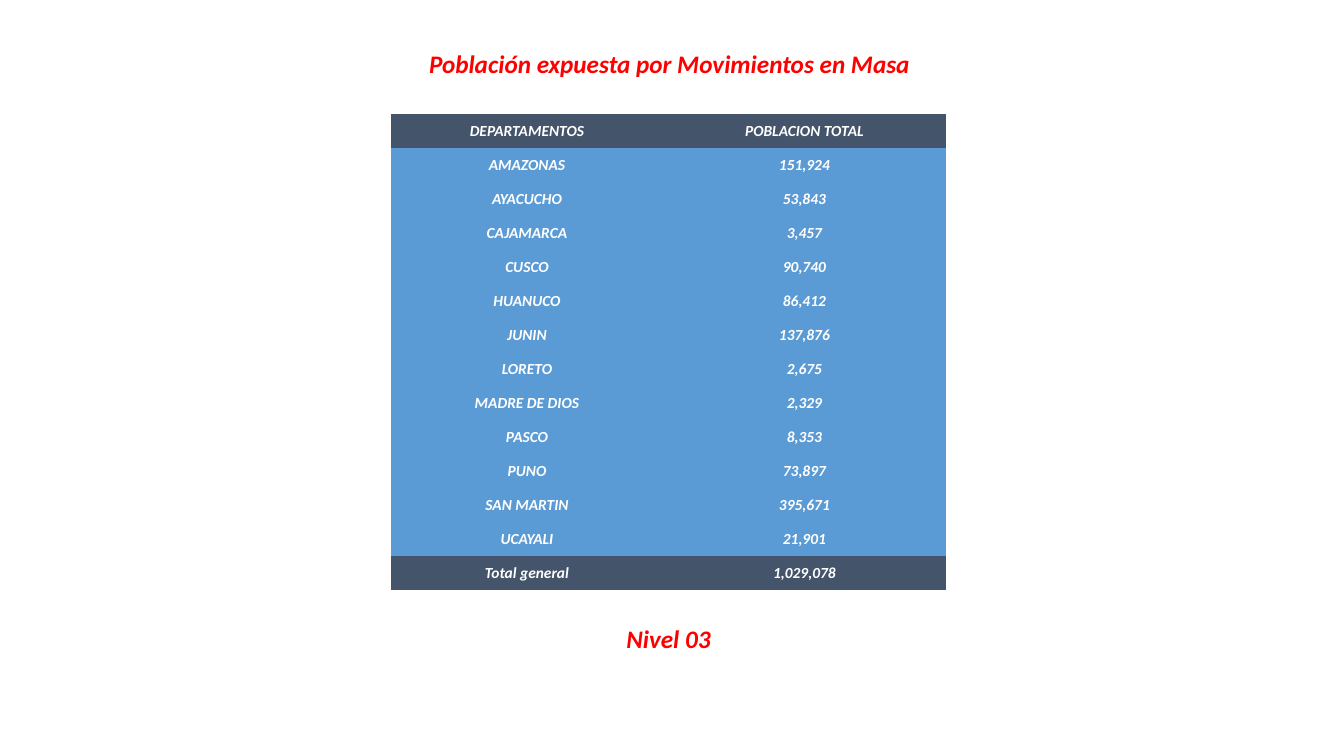
from pptx import Presentation
from pptx.dml.color import RGBColor
from pptx.enum.text import MSO_ANCHOR, MSO_AUTO_SIZE, PP_ALIGN
from pptx.oxml.ns import qn
from pptx.util import Emu, Pt

EMU_PER_PX = 914400 / 100.8
FONT = "Calibri"
COLORS = {"heading": "FF0000", "text": "FFFFFF", "edge": "44546A", "body": "5B9BD5"}
NO_GRID_STYLE = "{2D5ABB26-0587-4C30-8999-92F81FD0307C}"
COLUMN_WIDTHS = (272, 283)
ROW_HEIGHT = 34

POPULATION = [
    ("DEPARTAMENTOS", "POBLACION TOTAL"),
    ("AMAZONAS", "151,924"),
    ("AYACUCHO", "53,843"),
    ("CAJAMARCA", "3,457"),
    ("CUSCO", "90,740"),
    ("HUANUCO", "86,412"),
    ("JUNIN", "137,876"),
    ("LORETO", "2,675"),
    ("MADRE DE DIOS", "2,329"),
    ("PASCO", "8,353"),
    ("PUNO", "73,897"),
    ("SAN MARTIN", "395,671"),
    ("UCAYALI", "21,901"),
    ("Total general", "1,029,078"),
]


def px(length):
    return Emu(round(length * EMU_PER_PX))


def write_text(frame, text, size, color):
    frame.text = text
    para = frame.paragraphs[0]
    para.alignment = PP_ALIGN.CENTER
    font = para.runs[0].font
    font.name = FONT
    font.size = Pt(size)
    font.bold = font.italic = True
    font.color.rgb = RGBColor.from_string(COLORS[color])


def add_heading(page, text, left, top, width, height, wrap):
    box = page.shapes.add_textbox(px(left), px(top), px(width), px(height))
    frame = box.text_frame
    frame.word_wrap = wrap
    frame.auto_size = MSO_AUTO_SIZE.SHAPE_TO_FIT_TEXT
    write_text(frame, text, 18, "heading")


def fill_cell(cell, text, color):
    cell.fill.solid()
    cell.fill.fore_color.rgb = RGBColor.from_string(COLORS[color])
    cell.vertical_anchor = MSO_ANCHOR.MIDDLE
    cell.margin_left = cell.margin_right = cell.margin_top = px(1)
    cell.margin_bottom = 0
    write_text(cell.text_frame, text, 11, "text")


def add_population_table(page, left, top):
    row_count = len(POPULATION)
    frame = page.shapes.add_table(
        row_count, len(COLUMN_WIDTHS), px(left), px(top),
        px(sum(COLUMN_WIDTHS)), px(row_count * ROW_HEIGHT),
    )
    table = frame.table
    table.first_row = table.horz_banding = False
    next(frame.element.iter(qn("a:tableStyleId"))).text = NO_GRID_STYLE
    for column, width in zip(table.columns, COLUMN_WIDTHS):
        column.width = px(width)
    for index, (row, values) in enumerate(zip(table.rows, POPULATION)):
        row.height = px(ROW_HEIGHT)
        color = "edge" if index in (0, row_count - 1) else "body"
        for cell, value in zip(row.cells, values):
            fill_cell(cell, value, color)


def main():
    deck = Presentation()
    deck.slide_width, deck.slide_height = px(1344), px(756)
    page = deck.slides.add_slide(deck.slide_layouts[6])
    add_heading(page, "Población expuesta por Movimientos en Masa", 416, 43, 507, 40, False)
    add_heading(page, "Nivel 03", 613, 618, 111, 40, True)
    add_population_table(page, 391, 114)
    deck.save("out.pptx")


if __name__ == "__main__":
    main()
